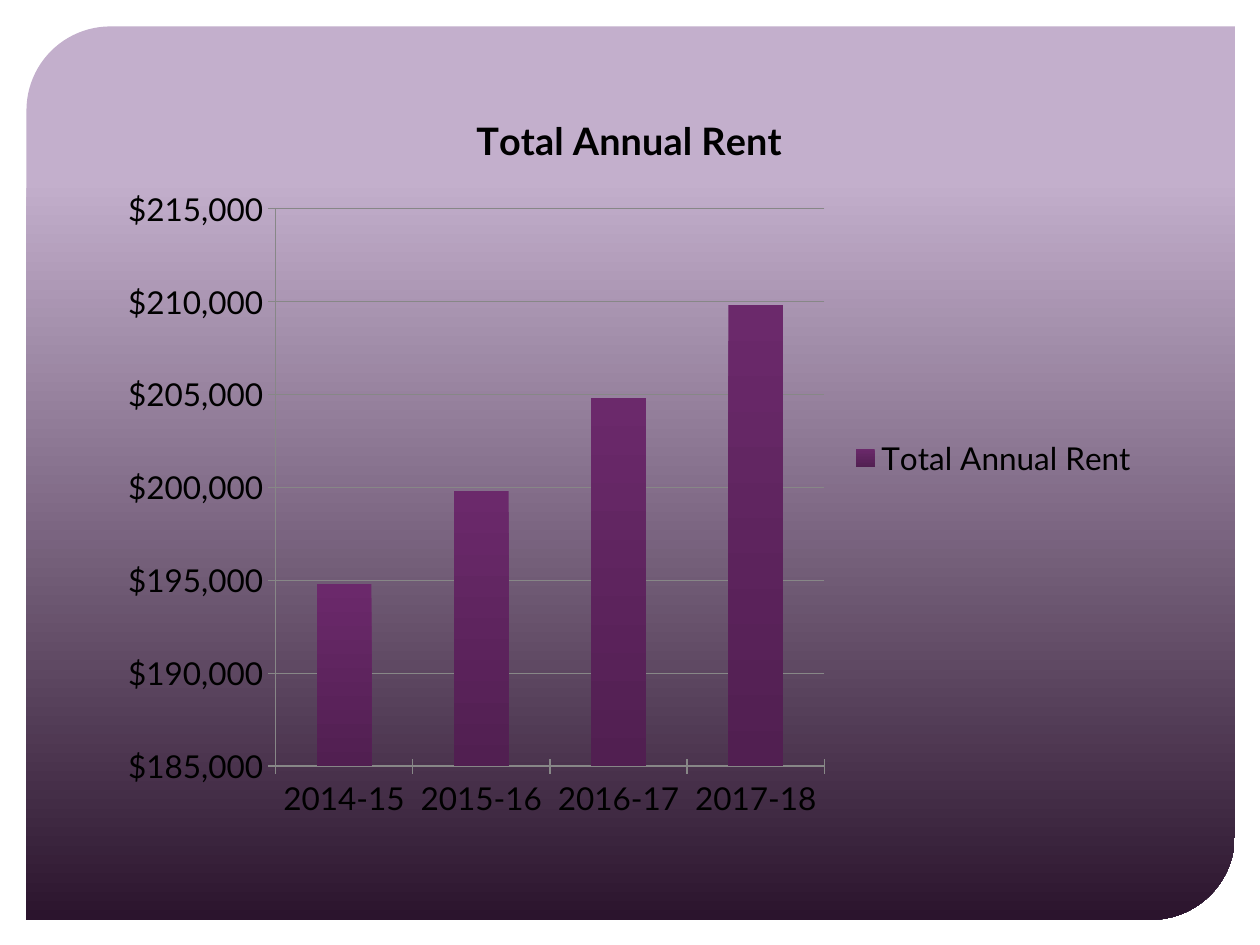
from pptx import Presentation
from pptx.chart.data import CategoryChartData
from pptx.dml.color import RGBColor
from pptx.enum.chart import XL_CHART_TYPE, XL_LEGEND_POSITION, XL_TICK_MARK
from pptx.enum.shapes import MSO_SHAPE
from pptx.util import Inches, Pt

TITLE = "Total Annual Rent"
RENT = {"2014-15": 194800, "2015-16": 199800, "2016-17": 204800, "2017-18": 209800}
AXIS_MIN, AXIS_MAX, AXIS_STEP = 185000, 215000, 5000
RENT_FORMAT = "\\$#,##0"
FONT = "Lato"
TEXT, LINE = "000000", "878787"
PANEL_STOPS = [(0.17, "C3AFCC"), (1, "2B142D")]
BAR_STOPS = [(0, "6B296B"), (1, "511F51")]


def rgb(value):
    return RGBColor.from_string(value)


def fill_downward(fill, stops):
    """Apply a gradient running from top to bottom."""
    fill.gradient()
    fill.gradient_angle = 270
    for stop, (position, color) in zip(fill.gradient_stops, stops):
        stop.position = position
        stop.color.rgb = rgb(color)


def style_font(font, size, bold=False):
    font.name = FONT
    font.size = Pt(size)
    font.bold = bold
    font.color.rgb = rgb(TEXT)


def style_line(line):
    line.color.rgb = rgb(LINE)
    line.width = Pt(0.75)


def add_panel(slide):
    panel = slide.shapes.add_shape(
        MSO_SHAPE.ROUND_2_DIAG_RECTANGLE,
        Inches(0.21), Inches(0.21), Inches(9.59), Inches(7.09))
    panel.adjustments[0] = 0.094
    panel.adjustments[1] = 0
    panel.shadow.inherit = False
    panel.line.fill.background()
    fill_downward(panel.fill, PANEL_STOPS)


def add_rent_chart(slide):
    rent_data = CategoryChartData(number_format=RENT_FORMAT)
    rent_data.categories = list(RENT)
    rent_data.add_series(TITLE, list(RENT.values()))
    chart = slide.shapes.add_chart(
        XL_CHART_TYPE.COLUMN_CLUSTERED,
        Inches(0.85), Inches(0.67), Inches(8.29), Inches(5.93), rent_data).chart
    style_font(chart.font, 18)

    chart.has_title = True
    title = chart.chart_title.text_frame
    title.text = TITLE
    style_font(title.paragraphs[0].runs[0].font, 21.6, bold=True)
    chart.chart_title.include_in_layout = False

    chart.has_legend = True
    chart.legend.position = XL_LEGEND_POSITION.RIGHT
    chart.legend.include_in_layout = False

    for axis in (chart.category_axis, chart.value_axis):
        axis.major_tick_mark = XL_TICK_MARK.CROSS
        style_line(axis.format.line)

    rent_axis = chart.value_axis
    rent_axis.minimum_scale = AXIS_MIN
    rent_axis.maximum_scale = AXIS_MAX
    rent_axis.major_unit = AXIS_STEP
    rent_axis.tick_labels.number_format = RENT_FORMAT
    rent_axis.tick_labels.number_format_is_linked = False
    rent_axis.has_major_gridlines = True
    style_line(rent_axis.major_gridlines.format.line)

    bars = chart.plots[0]
    bars.gap_width = 150
    bars.vary_by_categories = False
    fill_downward(bars.series[0].format.fill, BAR_STOPS)


def main():
    prs = Presentation()
    prs.slide_width, prs.slide_height = Inches(10), Inches(7.5)
    slide = prs.slides.add_slide(prs.slide_layouts[6])
    add_panel(slide)
    add_rent_chart(slide)
    prs.save("out.pptx")


if __name__ == "__main__":
    main()
